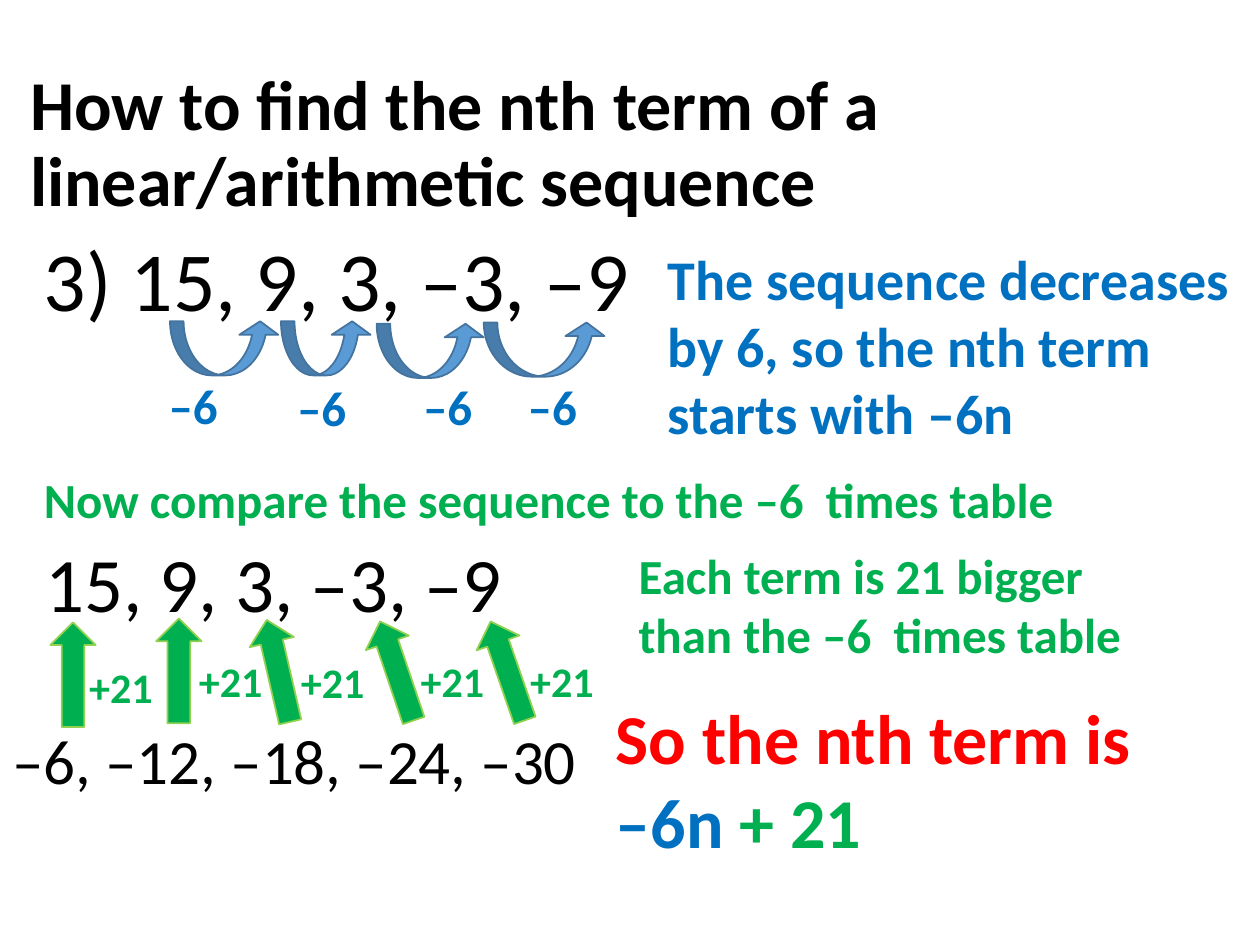
import pptx
import pptx.dml.color
import pptx.enum.shapes
import pptx.enum.text
import pptx.util

RGB = pptx.dml.color.RGBColor
SHAPE = pptx.enum.shapes.MSO_SHAPE
ANCHOR = pptx.enum.text.MSO_ANCHOR
FIT = pptx.enum.text.MSO_AUTO_SIZE

PX = 9144
BLACK = RGB(0x00, 0x00, 0x00)
WHITE = RGB(0xFF, 0xFF, 0xFF)
BLUE = RGB(0x00, 0x70, 0xC0)
GREEN = RGB(0x00, 0xB0, 0x50)
RED = RGB(0xFF, 0x00, 0x00)
SKY = RGB(0x5B, 0x9B, 0xD5)
STEEL = RGB(0x43, 0x73, 0x9E)
LIME = RGB(0x92, 0xD0, 0x50)

HOPS = [(135, 255, 87), (223, 255, 72), (299, 257, 86), (384, 256, 97)]
STEPS = [(124, 293), (226, 295), (326, 294), (409, 294)]
RISES = [(40, 494, 0), (124, 491, 0), (203, 491, 347),
         (297, 491, 341.3), (385, 491, 340.9)]
GAINS = [(61, 520, 101), (148, 515, 81), (229, 516, 84),
         (324, 515, 81), (411, 515, 86)]


def scale(*sizes):
    """Turn px into EMU."""
    return [pptx.util.Emu(size * PX) for size in sizes]


def style(run, size, color, bold):
    """Set the font of one run."""
    font = run.font
    font.name = "Calibri"
    font.size = pptx.util.Pt(size)
    font.bold = bold
    font.color.rgb = color


def add_text(slide, box, lines, size, bold=True, wrap=True, lead=None):
    """Add a text box whose lines are lists of (text, color) runs."""
    frame = slide.shapes.add_textbox(*scale(*box)).text_frame
    frame.word_wrap = wrap
    frame.auto_size = FIT.NONE if lead else FIT.SHAPE_TO_FIT_TEXT
    for row, parts in enumerate(lines):
        para = frame.paragraphs[0] if row == 0 else frame.add_paragraph()
        para.line_spacing = lead
        for text, color in parts:
            run = para.add_run()
            run.text = text
            style(run, size, color, bold)
    return frame


def add_arrow(slide, kind, box, fill, edge, turn=0):
    """Add a filled and outlined block arrow."""
    arrow = slide.shapes.add_shape(kind, *scale(*box))
    arrow.shadow.inherit = False
    arrow.fill.solid()
    arrow.fill.fore_color.rgb = fill
    arrow.line.color.rgb = edge
    arrow.line.width = pptx.util.Pt(1)
    arrow.rotation = turn
    return arrow


def add_hops(slide):
    """Show the step between terms of the sequence."""
    for left, top, width in HOPS:
        arrow = add_arrow(slide, SHAPE.CURVED_UP_ARROW,
                          (left, top, width, 43), SKY, STEEL)
        for index, value in enumerate((0.25, 0.721, 0.25)):
            arrow.adjustments[index] = value
    for left, top in STEPS:
        add_text(slide, (left, top, 67, 57), [[("–6", BLUE)]], 28)


def add_rises(slide):
    """Show the gain from the times table to each term."""
    for left, top, turn in RISES:
        add_arrow(slide, SHAPE.UP_ARROW, (left, top, 36, 83),
                  GREEN, LIME, turn)
    for left, top, width in GAINS:
        add_text(slide, (left, top, width, 50), [[("+21", GREEN)]], 24)


def main():
    """Build and save the slide."""
    deck = pptx.Presentation()
    deck.slide_width, deck.slide_height = scale(1000, 750)
    slide = deck.slides.add_slide(deck.slide_layouts[6])
    slide.background.fill.solid()
    slide.background.fill.fore_color.rgb = WHITE

    title = "How to find the nth term of a linear/arithmetic sequence"
    head = add_text(slide, (14, 43, 862, 145), [[(title, BLACK)]], 40,
                    lead=0.9)
    head.vertical_anchor = ANCHOR.MIDDLE
    add_text(slide, (25, 185, 862, 86), [[("3) 15, 9, 3, –3, –9", BLACK)]],
             48, bold=False, lead=0.9)
    rule = "The sequence decreases by 6, so the nth term starts with –6n"
    add_text(slide, (520, 189, 480, 172), [[(rule, BLUE)]], 32)
    add_hops(slide)

    task = "Now compare the sequence to the –6  times table"
    add_text(slide, (25, 368, 851, 57), [[(task, GREEN)]], 28)
    add_text(slide, (26, 420, 387, 84), [[("15, 9, 3, –3, –9", BLACK)]], 44,
             bold=False, wrap=False)
    add_text(slide, (0, 568, 472, 71), [[("–6, –12, –18, –24, –30", BLACK)]],
             36, bold=False, wrap=False)
    add_rises(slide)

    note = "Each term is 21 bigger than the –6  times table"
    add_text(slide, (497, 428, 447, 104), [[(note, GREEN)]], 28)
    add_text(slide, (479, 546, 449, 145),
             [[("So the nth term is", RED)],
              [("–6n ", BLUE), ("+ 21", GREEN)]], 40)
    deck.save("out.pptx")


if __name__ == "__main__":
    main()
